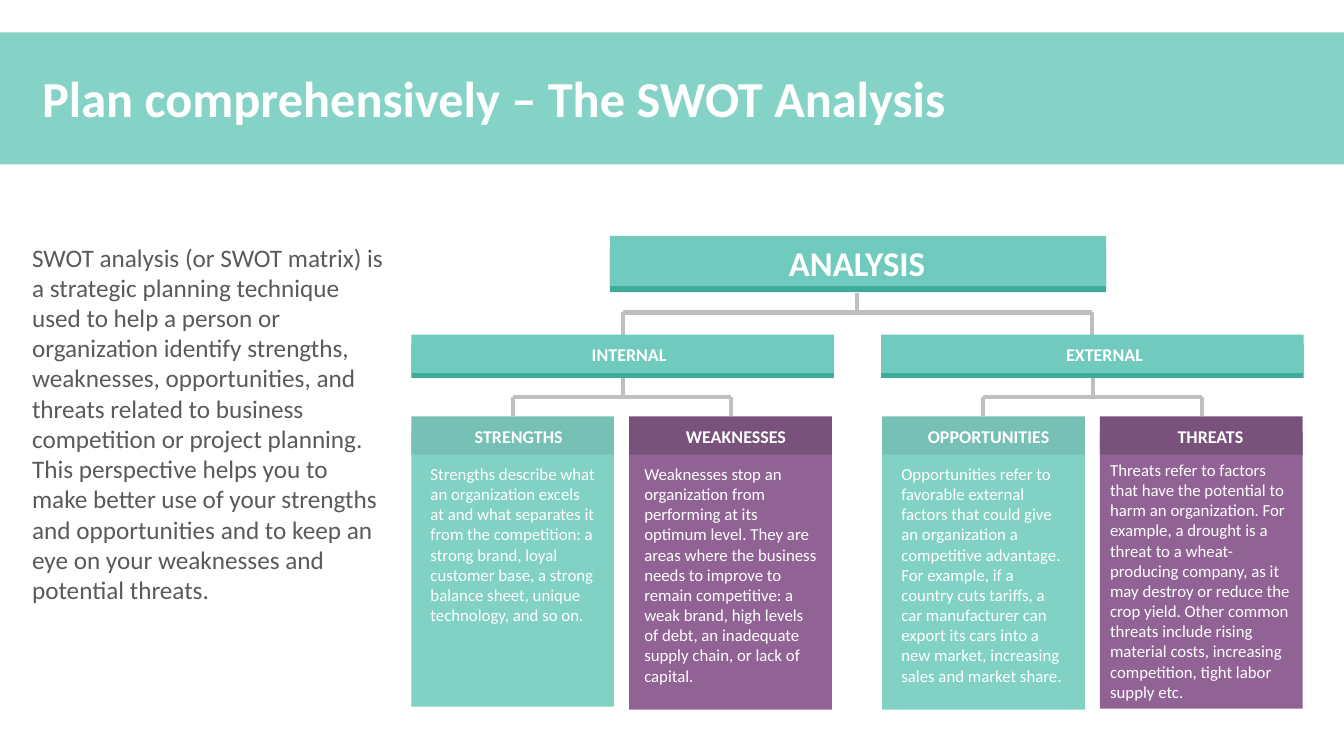
from lxml import etree
from pptx import Presentation
from pptx.dml.color import RGBColor
from pptx.enum import shapes, text
from pptx.oxml.ns import qn
from pptx.util import Inches, Pt

COLORS = {
    "banner": "85D2C7", "white": "FFFFFF", "prose": "595A59", "line": "BFBFBF",
    "bar": "70CABD", "bar_edge": "3FAB9C",
    "teal": "81D1C5", "teal_head": "76C0B5",
    "purple": "916395", "purple_head": "79527B",
}
FONT = "Calibri"
HEAD_TOP = 4.13
CARD_WIDTH = 2.01

INTRO = (
    "SWOT analysis (or SWOT matrix) is a strategic planning technique used to help "
    "a person or organization identify strengths, weaknesses, opportunities, and "
    "threats related to business competition or project planning. This perspective "
    "helps you to make better use of your strengths and opportunities and to keep "
    "an eye on your weaknesses and potential threats."
)

# heading, heading box (left, width), tone, card left, card top, card bottom,
# body text box (left, top, width, height), body text
CARDS = [
    ("STRENGTHS", (4.57, 1.15), "teal", 4.08, 4.27, 7.01, (4.18, 4.56, 1.83, 1.71),
     "Strengths describe what an organization excels at and what separates it from "
     "the competition: a strong brand, loyal customer base, a strong balance sheet, "
     "unique technology, and so on."),
    ("WEAKNESSES", (6.68, 1.24), "purple", 6.24, 4.27, 7.04, (6.3, 4.56, 1.93, 2.31),
     "Weaknesses stop an organization from performing at its optimum level. They are "
     "areas where the business needs to improve to remain competitive: a weak brand, "
     "high levels of debt, an inadequate supply chain, or lack of capital."),
    ("OPPORTUNITIES", (9.09, 1.43), "teal", 8.75, 4.29, 7.04, (8.85, 4.56, 1.83, 2.31),
     "Opportunities refer to favorable external factors that could give an "
     "organization a competitive advantage. For example, if a country cuts tariffs, "
     "a car manufacturer can export its cars into a new market, increasing sales and "
     "market share."),
    ("THREATS", (11.51, 0.99), "purple", 10.91, 4.29, 7.03, (10.92, 4.52, 2, 2.51),
     "Threats refer to factors that have the potential to harm an organization. For "
     "example, a drought is a threat to a wheat-producing company, as it may destroy "
     "or reduce the crop yield. Other common threats include rising material costs, "
     "increasing competition, tight labor supply etc."),
]


def add_block(slide, left, top, width, height, color):
    block = slide.shapes.add_shape(
        shapes.MSO_SHAPE.RECTANGLE,
        Inches(left), Inches(top), Inches(width), Inches(height))
    block.shadow.inherit = False
    block.fill.solid()
    block.fill.fore_color.rgb = RGBColor.from_string(COLORS[color])
    block.line.fill.background()


def add_text(slide, box, words, size, color="white", bold=False, inset=(0.1, 0.05)):
    frame = slide.shapes.add_textbox(*map(Inches, box)).text_frame
    frame.word_wrap = True
    frame.margin_left = frame.margin_right = Inches(inset[0])
    frame.margin_top = frame.margin_bottom = Inches(inset[1])
    paragraph = frame.paragraphs[0]
    paragraph.text = words
    paragraph.font.name = FONT
    paragraph.font.size = Pt(size)
    paragraph.font.bold = bold
    paragraph.font.color.rgb = RGBColor.from_string(COLORS[color])
    return frame


def add_heading(slide, box, words, size=12.8):
    """Add a bold label centred in its box and kept on one line."""
    frame = add_text(slide, box, words, size, bold=True)
    frame.word_wrap = False
    frame.vertical_anchor = text.MSO_ANCHOR.MIDDLE
    frame.paragraphs[0].alignment = text.PP_ALIGN.CENTER


def add_line(slide, x1, y1, x2, y2):
    line = slide.shapes.add_connector(
        shapes.MSO_CONNECTOR.STRAIGHT,
        Inches(x1), Inches(y1), Inches(x2), Inches(y2))
    line.line.color.rgb = RGBColor.from_string(COLORS["line"])
    line.line.width = Pt(3)
    etree.SubElement(line._element.spPr, qn("a:effectLst"))


def add_fork(slide, stem, top, rail, bottom, left, right):
    """Join one parent to two children: a stem, a rail and two drops."""
    add_line(slide, stem, top, stem, rail)
    add_line(slide, left, rail, right, rail)
    for drop in (left, right):
        add_line(slide, drop, rail, drop, bottom)


def add_bar(slide, left, top, width, height, edge_top, edge_height):
    """Add a bar with a darker strip showing along its lower edge."""
    add_block(slide, left, edge_top, width, edge_height, "bar_edge")
    add_block(slide, left, top, width, height, "bar")


def add_card(slide, heading, heading_span, tone, left, top, bottom, body_box, body):
    add_block(slide, left, top, CARD_WIDTH, bottom - top, tone)
    add_block(slide, left, HEAD_TOP, CARD_WIDTH, 0.38, tone + "_head")
    heading_left, heading_width = heading_span
    add_heading(slide, (heading_left, 4.17, heading_width, 0.32), heading)
    add_text(slide, body_box, body, 12, inset=(0.09, 0.04))


def main():
    deck = Presentation()
    deck.slide_width, deck.slide_height = Inches(13.33), Inches(7.5)
    slide = deck.slides.add_slide(deck.slide_layouts[6])

    add_block(slide, 0, 0.32, 13.33, 1.31, "banner")
    title = add_text(slide, (0.32, 0.68, 12.42, 0.98),
                     "Plan comprehensively – The SWOT Analysis", 36, bold=True)
    title.paragraphs[0].line_spacing = 0.9
    add_text(slide, (0.22, 2.35, 3.7, 3.74), INTRO, 18, "prose")

    add_fork(slide, 8.5, 2.91, 3.1, 3.32, 6.18, 10.83)
    add_fork(slide, 6.18, 3.75, 3.94, HEAD_TOP, 5.09, 7.25)
    add_fork(slide, 10.84, 3.75, 3.94, HEAD_TOP, 9.75, 11.92)

    add_bar(slide, 6.05, 2.34, 4.92, 0.5, 2.47, 0.43)
    add_heading(slide, (7.59, 2.34, 1.82, 0.52), "ANALYSIS", 24.8)
    for branch, left, label_left, label_width in (
            ("INTERNAL", 4.08, 5.72, 1.04), ("EXTERNAL", 8.74, 10.38, 1.15)):
        add_bar(slide, left, 3.32, 4.19, 0.38, 3.42, 0.33)
        add_heading(slide, (label_left, 3.35, label_width, 0.32), branch)

    for card in CARDS:
        add_card(slide, *card)

    deck.save("out.pptx")


if __name__ == "__main__":
    main()
